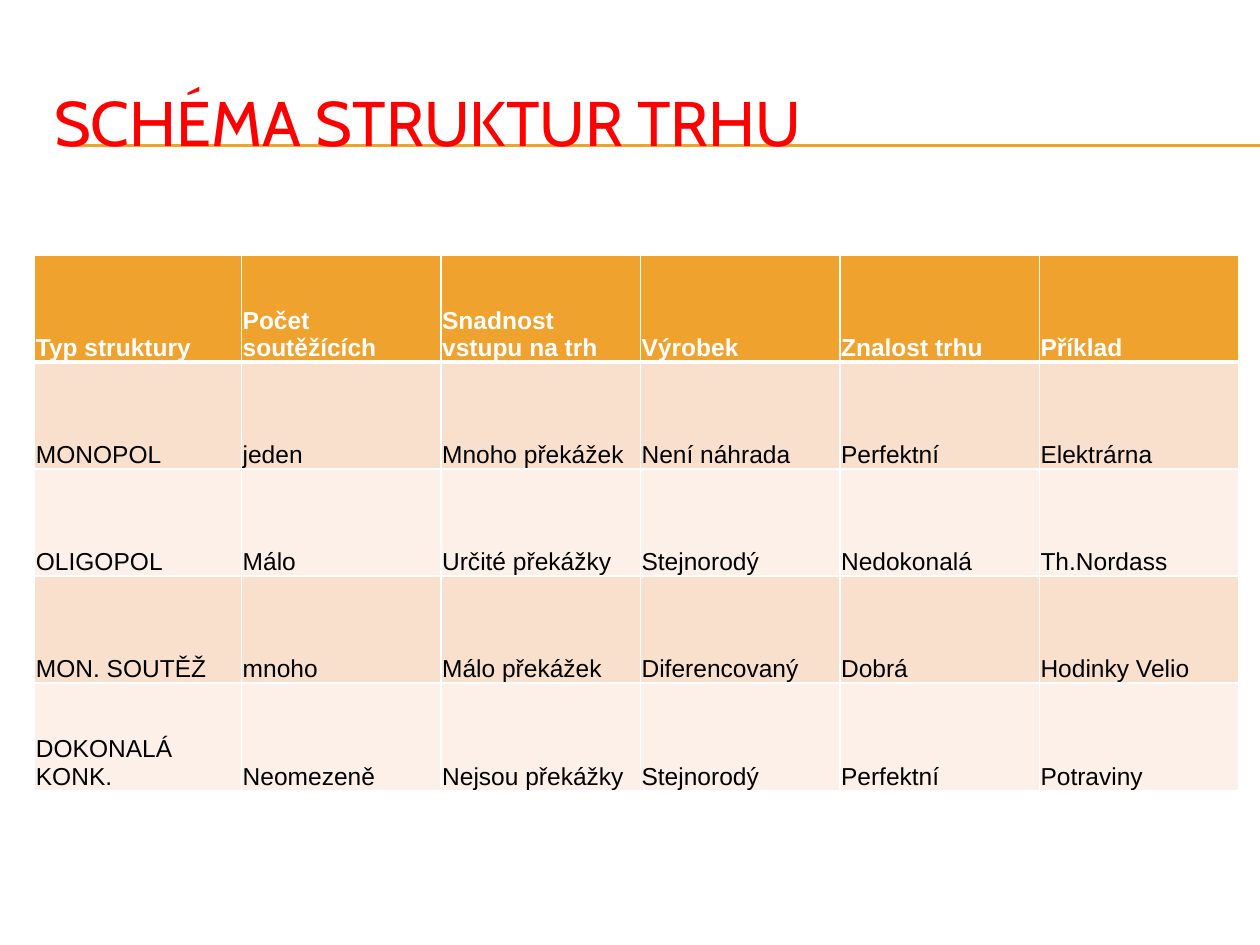
from lxml import etree
from pptx import Presentation
from pptx.dml.color import RGBColor
from pptx.enum import shapes, text
from pptx.oxml import ns
from pptx.util import Pt

TITLE = "SCHÉMA STRUKTUR TRHU"
ROWS = [
    ("Typ struktury", "Počet soutěžících", "Snadnost vstupu na trh",
     "Výrobek", "Znalost trhu", "Příklad"),
    ("MONOPOL", "jeden", "Mnoho překážek", "Není náhrada", "Perfektní", "Elektrárna"),
    ("OLIGOPOL", "Málo", "Určité překážky", "Stejnorodý", "Nedokonalá", "Th.Nordass"),
    ("MON. SOUTĚŽ", "mnoho", "Málo překážek", "Diferencovaný", "Dobrá", "Hodinky Velio"),
    ("DOKONALÁ KONK.", "Neomezeně", "Nejsou překážky", "Stejnorodý", "Perfektní", "Potraviny"),
]
ORANGE, WHITE, BLACK, RED = "F0A22E", "FFFFFF", "000000", "FF0000"
BANDS = ["FCF0E8", "F9E0CD"]
SLIDE_WIDTH, SLIDE_HEIGHT = 720, 540
RULE_LEFT, RULE_TOPS = 40.3, (82.8, 83.5)
TABLE_LEFT, TABLE_TOP = 19.8, 145.6
FIRST_WIDTH, COLUMN_WIDTH, ROW_HEIGHT = 118.2, 114, 61.2


def color(value):
    return RGBColor.from_string(value)


def format_span(span, font, size, fill, bold=False):
    span.font.name = font
    span.font.size = Pt(size)
    span.font.bold = bold
    span.font.color.rgb = color(fill)


def add_rule(slide, top):
    rule = slide.shapes.add_connector(
        shapes.MSO_CONNECTOR.STRAIGHT, Pt(RULE_LEFT), Pt(top), Pt(SLIDE_WIDTH), Pt(top))
    rule.line.color.rgb = color(ORANGE)
    rule.line.width = Pt(0.75)
    etree.SubElement(rule._element.spPr, ns.qn("a:effectLst"))


def set_borders(cell, widths):
    properties = cell._tc.get_or_add_tcPr()
    for position, (side, width) in enumerate(widths.items()):
        border = etree.Element(ns.qn(f"a:ln{side}"), w=str(Pt(width)))
        fill = etree.SubElement(border, ns.qn("a:solidFill"))
        etree.SubElement(fill, ns.qn("a:srgbClr"), val=WHITE)
        properties.insert(position, border)


def fill_cell(cell, content, row):
    header = row == 0
    cell.fill.solid()
    cell.fill.fore_color.rgb = color(ORANGE if header else BANDS[row % 2])
    cell.margin_left = cell.margin_right = cell.margin_top = Pt(0.7)
    cell.margin_bottom = 0
    cell.vertical_anchor = text.MSO_ANCHOR.BOTTOM
    cell.text_frame.text = content
    format_span(cell.text_frame.paragraphs[0].runs[0], "Arial", 14,
                WHITE if header else BLACK, header)
    set_borders(cell, {"L": 1, "R": 1, "T": 3 if row == 1 else 1, "B": 3 if header else 1})


def add_title(slide):
    title = slide.shapes.title
    title.left, title.top, title.width, title.height = Pt(23.8), Pt(36), Pt(684), Pt(66.2)
    frame = title.text_frame
    frame.text = TITLE
    frame.word_wrap = True
    frame.vertical_anchor = text.MSO_ANCHOR.MIDDLE
    para = frame.paragraphs[0]
    para.alignment = text.PP_ALIGN.LEFT
    format_span(para.runs[0], "Cabin", 36, RED)
    title._element.getparent().append(title._element)


def add_market_table(slide):
    count = len(ROWS[0])
    widths = [FIRST_WIDTH] + [COLUMN_WIDTH] * (count - 1)
    table = slide.shapes.add_table(
        len(ROWS), count, Pt(TABLE_LEFT), Pt(TABLE_TOP),
        Pt(sum(widths)), Pt(ROW_HEIGHT * len(ROWS))).table
    for column, width in zip(table.columns, widths):
        column.width = Pt(width)
    for row, contents in enumerate(ROWS):
        table.rows[row].height = Pt(ROW_HEIGHT)
        for column, content in enumerate(contents):
            fill_cell(table.cell(row, column), content, row)


def main():
    deck = Presentation()
    deck.slide_width, deck.slide_height = Pt(SLIDE_WIDTH), Pt(SLIDE_HEIGHT)
    slide = deck.slides.add_slide(deck.slide_layouts.get_by_name("Title Only"))
    for top in RULE_TOPS:
        add_rule(slide, top)
    add_title(slide)
    add_market_table(slide)
    deck.save("out.pptx")


if __name__ == "__main__":
    main()
